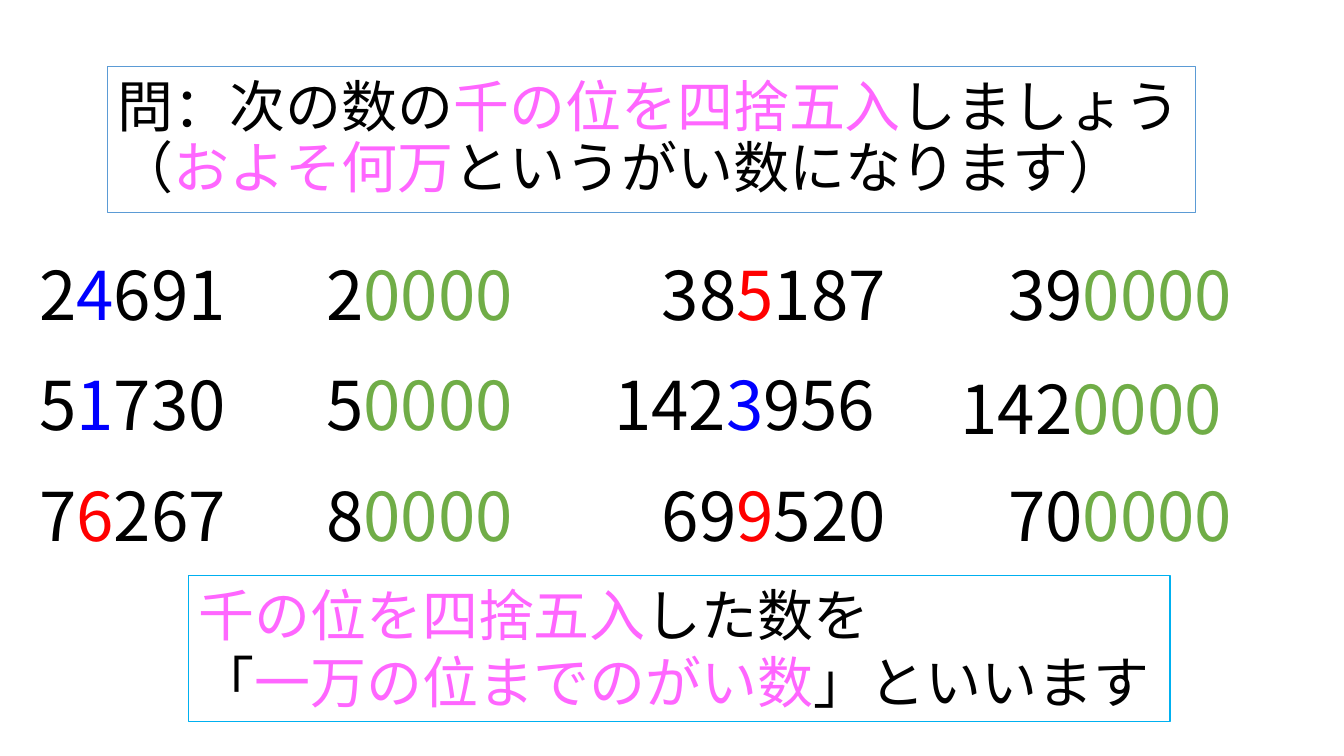
from dataclasses import dataclass

from pptx import Presentation
from pptx.dml.color import RGBColor
from pptx.enum.text import MSO_ANCHOR
from pptx.oxml.ns import qn
from pptx.util import Cm, Pt


@dataclass(frozen=True)
class Theme:
    font: str = "Noto Sans CJK JP"
    ink: str = "000000"
    key: str = "FF66FF"
    down: str = "0000FF"
    up: str = "FF0000"
    zeros: str = "70AD47"
    question_line: str = "5B9BD5"
    summary_line: str = "00B0F0"
    number_size: int = 48
    sentence_size: int = 40


theme = Theme()


def add_runs(p, runs, size):
    for text, color in runs:
        r = p.add_run()
        r.text = text
        for name, value in {"name": theme.font, "size": Pt(size)}.items():
            setattr(r.font, name, value)
        r.font.color.rgb = RGBColor.from_string(color)
        ea = r.font._element.makeelement(qn("a:ea"), {"typeface": theme.font})
        r.font._element.find(qn("a:latin")).addnext(ea)


def add_box(left, top, width, height):
    box = s.shapes.add_textbox(Cm(left), Cm(top), Cm(width), Cm(height))
    box.text_frame.word_wrap = True
    return box


prs = Presentation()
prs.slide_width, prs.slide_height = Cm(33.87), Cm(19.05)
s = prs.slides.add_slide(prs.slide_layouts[6])

# Numbers and their rounded values, each box ending at its column's right edge
columns = [
    (7.32, 14.55, [24691, 51730, 76267]),
    (24.21, 32.94, [385187, 1423956, 699520]),
]
first_top, row_step, number_height = 6.25, 2.79, 2.31
answer_drop = {1423956: 0.08}

for number_right, answer_right, numbers in columns:
    for row, number in enumerate(numbers):
        digits = str(number)
        top = first_top + row * row_step
        width = 6.58 + 1.2 * (len(digits) - 5)
        thousands = digits[-4]
        mark = theme.up if int(thousands) >= 5 else theme.down
        number_runs = [(digits[:-4], theme.ink), (thousands, mark), (digits[-3:], theme.ink)]
        answer_runs = [(str((number + 5000) // 10000), theme.ink), ("0000", theme.zeros)]
        for right, drop, runs in (
            (number_right, 0, number_runs),
            (answer_right, answer_drop.get(number, 0), answer_runs),
        ):
            box = add_box(right - width, top + drop, width, number_height)
            add_runs(box.text_frame.paragraphs[0], runs, theme.number_size)

# Question
question = add_box(2.72, 1.68, 27.4, 3.68)
question.line.color.rgb = RGBColor.from_string(theme.question_line)
question.line.width = Pt(0.75)
tf = question.text_frame
tf.vertical_anchor = MSO_ANCHOR.MIDDLE
p = tf.paragraphs[0]
p.line_spacing = 0.9
add_runs(p, [
    ("問：次の数の", theme.ink),
    ("千の位を四捨五入", theme.key),
    ("しましょう", theme.ink),
], theme.sentence_size)
p.add_line_break()
add_runs(p, [
    ("（", theme.ink),
    ("およそ何万", theme.key),
    ("というがい数になります）", theme.ink),
], theme.sentence_size)

# Summary
summary = add_box(4.75, 14.5, 24.74, 3.68)
summary.line.color.rgb = RGBColor.from_string(theme.summary_line)
summary.line.width = Pt(1)
tf = summary.text_frame
add_runs(tf.paragraphs[0], [
    ("千の位を四捨五入", theme.key),
    ("した数を", theme.ink),
], theme.sentence_size)
add_runs(tf.add_paragraph(), [
    ("「", theme.ink),
    ("一万の位までのがい数", theme.key),
    ("」といいます", theme.ink),
], theme.sentence_size)

prs.save("out.pptx")
